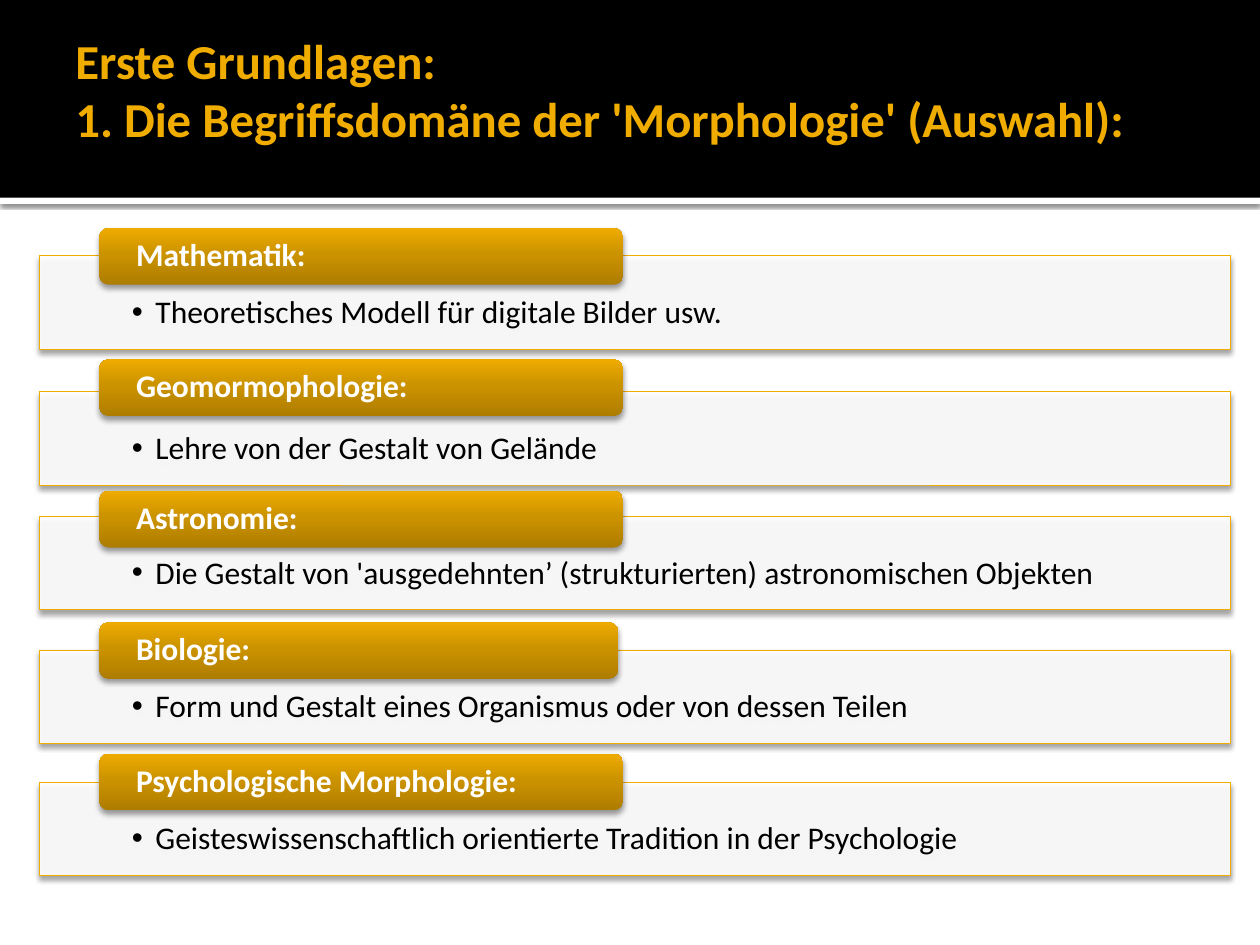
from copy import deepcopy
from typing import NamedTuple

from lxml import etree
from pptx import Presentation
from pptx import util as u
from pptx.dml.color import RGBColor
from pptx.enum import shapes, text
from pptx.oxml import ns

Pt = u.Pt

BLACK = RGBColor(0x00, 0x00, 0x00)
WHITE = RGBColor(0xFF, 0xFF, 0xFF)
AMBER = RGBColor(0xF0, 0xAD, 0x00)
TAB_STOPS = [
    (0, RGBColor(0xAE, 0x7D, 0x00)),
    (0.55, RGBColor(0xCC, 0x93, 0x00)),
    (1, RGBColor(0xEE, 0xAB, 0x00)),
]

CARD_LEFT, CARD_WIDTH, CARD_HEIGHT = 22.5, 680.4, 53.3
TAB_LEFT, TAB_TOP, TAB_HEIGHT, TAB_STEP = 56.7, 130.3, 32.4, 75.1


class Field(NamedTuple):
    heading: str
    body: str
    card_top: float
    tab_width: float = 299.5


FIELDS = [
    Field("Mathematik:", "Theoretisches Modell für digitale Bilder usw.", 146.2),
    Field("Geomormophologie:", "Lehre von der Gestalt von Gelände", 223.9),
    Field("Astronomie:",
          "Die Gestalt von 'ausgedehnten’ (strukturierten) astronomischen Objekten",
          295.2),
    Field("Biologie:", "Form und Gestalt eines Organismus oder von dessen Teilen",
          371.5, 296.6),
    Field("Psychologische Morphologie:",
          "Geisteswissenschaftlich orientierte Tradition in der Psychologie", 447.1),
]


def child(parent, tag: str, **attrs):
    return etree.SubElement(parent, ns.qn(tag), {k: str(v) for k, v in attrs.items()})


def add_box(s, kind, left: float, top: float, width: float, height: float,
            fill=None, line=None):
    sp = s.shapes.add_shape(kind, Pt(left), Pt(top), Pt(width), Pt(height))
    sp.shadow.inherit = False
    if fill is not None:
        sp.fill.solid()
        sp.fill.fore_color.rgb = fill
    if line is None:
        sp.line.fill.background()
    else:
        sp.line.color.rgb = line
        sp.line.width = Pt(0.5)
    return sp


def add_shadow(sp, blur: float, dist: float, opacity: int) -> None:
    effects = sp._element.spPr.find(ns.qn("a:effectLst"))
    shadow = child(effects, "a:outerShdw", blurRad=Pt(blur), dist=Pt(dist),
                   dir=90 * 60000, algn="ctr", rotWithShape=0)
    color = child(shadow, "a:srgbClr", val=BLACK)
    child(color, "a:alpha", val=opacity * 1000)


def fill_gradient(sp, stops: list) -> None:
    sp.fill.gradient()
    sp.fill.gradient_angle = 90
    stop_list = sp._element.spPr.find(".//" + ns.qn("a:gsLst"))
    while len(stop_list) < len(stops):
        stop_list.append(deepcopy(stop_list[-1]))
    for stop, (position, color) in zip(sp.fill.gradient_stops, stops):
        stop.position = position
        stop.color.rgb = color


def write(sp, content: str, *, size: float = 18, color=BLACK, bold: bool = False,
          anchor=text.MSO_ANCHOR.MIDDLE, insets=(0, 0, 0, 0),
          spacing: float = 1.0, bullet: bool = False) -> None:
    """Set one paragraph; insets run left, top, right, bottom in points."""
    tf = sp.text_frame
    tf.word_wrap = True
    tf.vertical_anchor = anchor
    tf.margin_left, tf.margin_top, tf.margin_right, tf.margin_bottom = map(Pt, insets)
    p = tf.paragraphs[0]
    p.text = content
    p.alignment = text.PP_ALIGN.LEFT
    p.line_spacing = spacing
    for r in p.runs:
        r.font.name = "Calibri"
        r.font.size = Pt(size)
        r.font.bold = bold
        r.font.color.rgb = color
    if bullet:
        props = p._p.get_or_add_pPr()
        props.set("marL", str(Pt(13.5)))
        props.set("indent", str(Pt(-13.5)))
        child(props, "a:buFont", typeface="Arial")
        child(props, "a:buChar", char="•")


def add_card(s, field: Field) -> None:
    card = add_box(s, shapes.MSO_SHAPE.RECTANGLE, CARD_LEFT, field.card_top,
                   CARD_WIDTH, CARD_HEIGHT, WHITE, AMBER)
    fill_color = card._element.spPr.find(ns.qn("a:solidFill"))[0]
    child(fill_color, "a:alpha", val=90000)
    add_shadow(card, 3.1, 2, 38)
    write(card, field.body, anchor=text.MSO_ANCHOR.TOP,
          insets=(52.8, 23, 52.8, 10), spacing=0.9, bullet=True)


def add_tab(s, field: Field, top: float) -> None:
    tab = add_box(s, shapes.MSO_SHAPE.ROUNDED_RECTANGLE, TAB_LEFT, top,
                  field.tab_width, TAB_HEIGHT)
    fill_gradient(tab, TAB_STOPS)
    add_shadow(tab, 3.1, 2, 38)
    write(tab, field.heading, color=WHITE, bold=True,
          insets=(19.5, 0, 19.5, 0), spacing=0.9)


def main() -> None:
    prs = Presentation()
    prs.slide_width, prs.slide_height = Pt(720), Pt(540)
    s = prs.slides.add_slide(prs.slide_layouts[6])

    # Header band with its shaded rule
    rule = add_box(s, shapes.MSO_SHAPE.RECTANGLE, 0, 113, 720, 3.6, WHITE)
    add_shadow(rule, 2.5, 0.8, 60)
    add_box(s, shapes.MSO_SHAPE.RECTANGLE, 0, 0, 720, 113, BLACK)

    # Title, lifted by a deep bottom inset
    title = s.shapes.add_textbox(Pt(36), Pt(34.6), Pt(648), Pt(77.8))
    write(title, "Erste Grundlagen:\v1. Die Begriffsdomäne der 'Morphologie' (Auswahl):",
          size=27.9, color=AMBER, bold=True, insets=(7.2, 3.6, 3.6, 48.8))

    # One card with a heading tab per field
    for i, field in enumerate(FIELDS):
        add_card(s, field)
        add_tab(s, field, TAB_TOP + i * TAB_STEP)

    prs.save("out.pptx")


if __name__ == "__main__":
    main()
